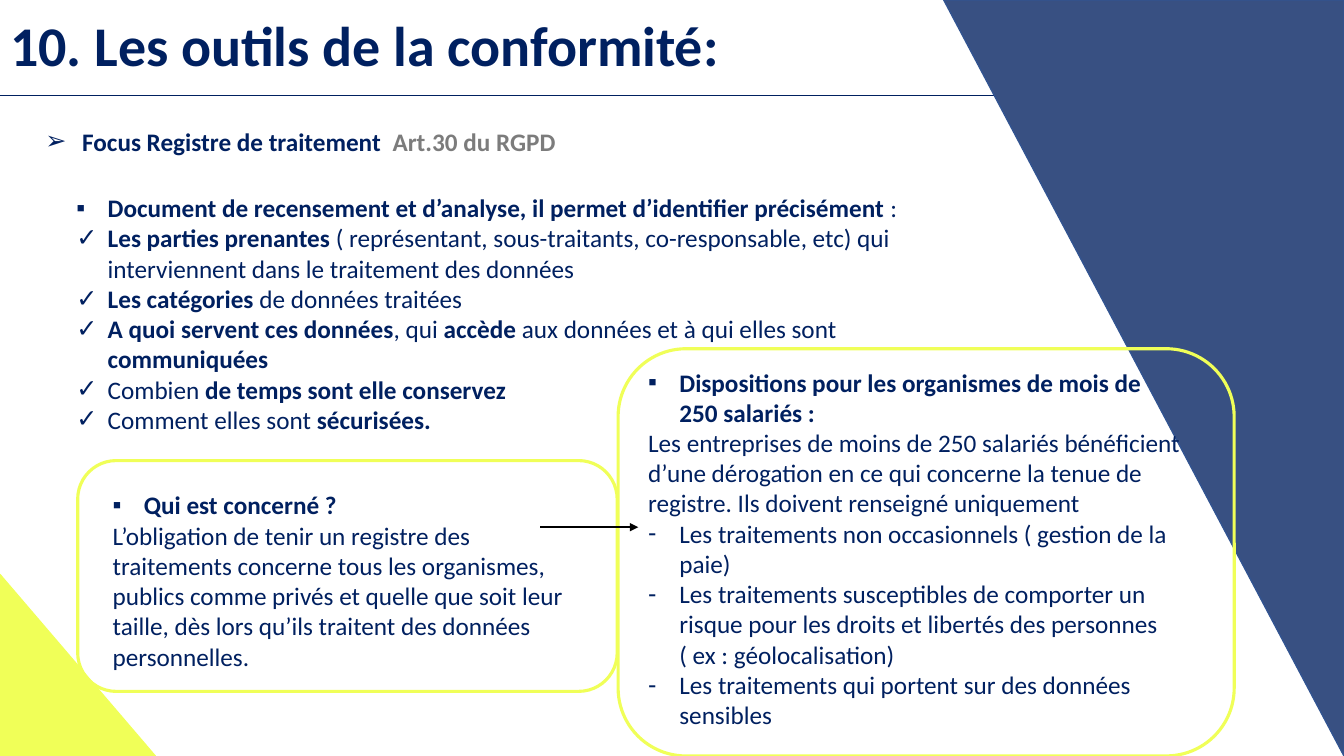
from lxml import etree
from pptx import Presentation
from pptx import util as u
from pptx.dml.color import RGBColor
from pptx.enum import shapes, text
from pptx.oxml.ns import qn

NAVY, YELLOW, GREY, WHITE, BLACK = "002060", "F0FF58", "7C7C7C", "FFFFFF", "000000"
EDGE_BLUE = "325491"
FONT = "Calibri"
BOLD, PLAIN, BOLD_GREY = (True, NAVY), (False, NAVY), (True, GREY)

HEADING = "10. Les outils de la conformité:"

FOCUS = [("➢", [(" Focus Registre de traitement  ", BOLD), ("Art.30 du RGPD", BOLD_GREY)])]
CONTENTS = [
    ("▪", [("Document de recensement et d’analyse, il permet d’identifier précisément ", BOLD),
           (":", PLAIN)]),
    ("✓", [("Les parties prenantes ", BOLD),
           ("( représentant, sous-traitants, co-responsable, etc) qui interviennent "
            "dans le traitement des données", PLAIN)]),
    ("✓", [("Les catégories ", BOLD), ("de données traitées", PLAIN)]),
    ("✓", [("A quoi servent ces données", BOLD), (", qui ", PLAIN), ("accède ", BOLD),
           ("aux données et à qui elles sont ", PLAIN), ("communiquées", BOLD)]),
    ("✓", [("Combien ", PLAIN), ("de temps sont elle conservez", BOLD)]),
    ("✓", [("Comment elles sont ", PLAIN), ("sécurisées.", BOLD)]),
]
CONCERNED = [
    ("▪", [("Qui est concerné ?", BOLD)]),
    (None, [("L’obligation de tenir un registre des traitements concerne tous les organismes, "
             "publics comme privés et quelle que soit leur taille, dès lors qu’ils traitent "
             "des données personnelles.", PLAIN)]),
]
EXEMPTIONS = [
    ("▪", [("Dispositions pour les organismes de mois de 250 salariés :", BOLD)]),
    (None, [("Les entreprises de moins de 250 salariés bénéficient d’une dérogation en ce qui "
             "concerne la tenue de registre. Ils doivent renseigné uniquement", PLAIN)]),
    ("-", [("Les traitements non occasionnels ( gestion de la paie)", PLAIN)]),
    ("-", [("Les traitements susceptibles de comporter un risque pour les droits et libertés "
            "des personnes ( ex : géolocalisation)", PLAIN)]),
    ("-", [("Les traitements qui portent sur des données sensibles", PLAIN)]),
]

# percent of slide width and height: left, top, width, height
TITLE_AREA = (0, 3.2, 73.97, 6.4)
SHAPES = [
    ("ROUNDED_RECTANGLE", (5.78, 60.93, 40.14, 30.53), WHITE, None, YELLOW, 2.25, 0),
    ("RIGHT_TRIANGLE", (0, 76, 11.55, 24), YELLOW, None, YELLOW, 1, 0),
    ("RIGHT_TRIANGLE", (70.22, 0, 29.78, 100), NAVY, 78, EDGE_BLUE, 1, 180),
    ("ROUNDED_RECTANGLE", (45.99, 46.13, 45.84, 53.87), None, None, YELLOW, 2.25, 0),
]
TEXTS = [
    ((2.63, 16, 42.09, 5.33), FOCUS),
    ((4.95, 24.8, 64.07, 33.6), CONTENTS),
    ((7.65, 64.13, 37.13, 25.6), CONCERNED),
    ((47.49, 47.87, 41.19, 49.87), EXEMPTIONS),
]
LINES = [
    (0, 73.97, 12.67, NAVY, 1, False),
    (40.21, 47.49, 69.73, BLACK, 1.5, True),
]

prs = Presentation()
prs.slide_width, prs.slide_height = u.Inches(13.33), u.Inches(7.5)
slide = prs.slides.add_slide(prs.slide_layouts[5])


def across(share):
    return round(prs.slide_width * share / 100)


def down(share):
    return round(prs.slide_height * share / 100)


def place(area):
    left, top, width, height = area
    return across(left), down(top), across(width), down(height)


def paint(color_format, color):
    color_format.solid()
    color_format.fore_color.rgb = RGBColor.from_string(color)


def add_run(paragraph, words, size, bold, color):
    run = paragraph.add_run()
    run.text = words
    run.font.name, run.font.size, run.font.bold = FONT, u.Pt(size), bold
    paint(run.font.fill, color)


def add_bullet(paragraph, mark):
    props = paragraph._p.get_or_add_pPr()
    indent = u.Inches(0.31)
    props.set("marL", str(indent))
    props.set("indent", str(-indent))
    etree.SubElement(props, qn("a:buFont")).set("typeface", "Arial")
    etree.SubElement(props, qn("a:buChar")).set("char", mark)


def add_shape(kind, area, fill, opacity, edge, weight, turn):
    shape = slide.shapes.add_shape(shapes.MSO_SHAPE[kind], *place(area))
    shape.shadow.inherit = False
    shape.rotation = turn
    if fill:
        paint(shape.fill, fill)
    else:
        shape.fill.background()
    if opacity:
        tint = shape.fill._xPr.find(qn("a:solidFill"))[0]
        etree.SubElement(tint, qn("a:alpha")).set("val", str(opacity * 1000))
    paint(shape.line.fill, edge)
    shape.line.width = u.Pt(weight)


def add_text(area, paragraphs):
    frame = slide.shapes.add_textbox(*place(area)).text_frame
    frame.word_wrap = True
    for i, (mark, runs) in enumerate(paragraphs):
        paragraph = frame.add_paragraph() if i else frame.paragraphs[0]
        if mark:
            add_bullet(paragraph, mark)
        for words, (bold, color) in runs:
            add_run(paragraph, words, 18, bold, color)


def add_line(start, end, level, color, weight, arrow):
    line = slide.shapes.add_connector(
        shapes.MSO_CONNECTOR.STRAIGHT, across(start), down(level), across(end), down(level))
    paint(line.line.fill, color)
    line.line.width = u.Pt(weight)
    if arrow:
        etree.SubElement(line.line._get_or_add_ln(), qn("a:tailEnd")).set("type", "triangle")
    etree.SubElement(line._element.spPr, qn("a:effectLst"))


def add_title():
    title = slide.shapes.title
    title.left, title.top, title.width, title.height = place(TITLE_AREA)
    frame = title.text_frame
    frame.vertical_anchor = text.MSO_ANCHOR.MIDDLE
    frame.auto_size = text.MSO_AUTO_SIZE.NONE
    paragraph = frame.paragraphs[0]
    paragraph.alignment = text.PP_ALIGN.LEFT
    paragraph.line_spacing = 0.9
    add_run(paragraph, HEADING, 40, True, NAVY)


add_title()
rule, arrow = LINES
*backdrops, exemption_frame = SHAPES
for backdrop in backdrops[:2]:
    add_shape(*backdrop)
add_line(*rule)
add_shape(*backdrops[2])
for area, paragraphs in TEXTS:
    add_text(area, paragraphs)
add_shape(*exemption_frame)
add_line(*arrow)
prs.save("out.pptx")
